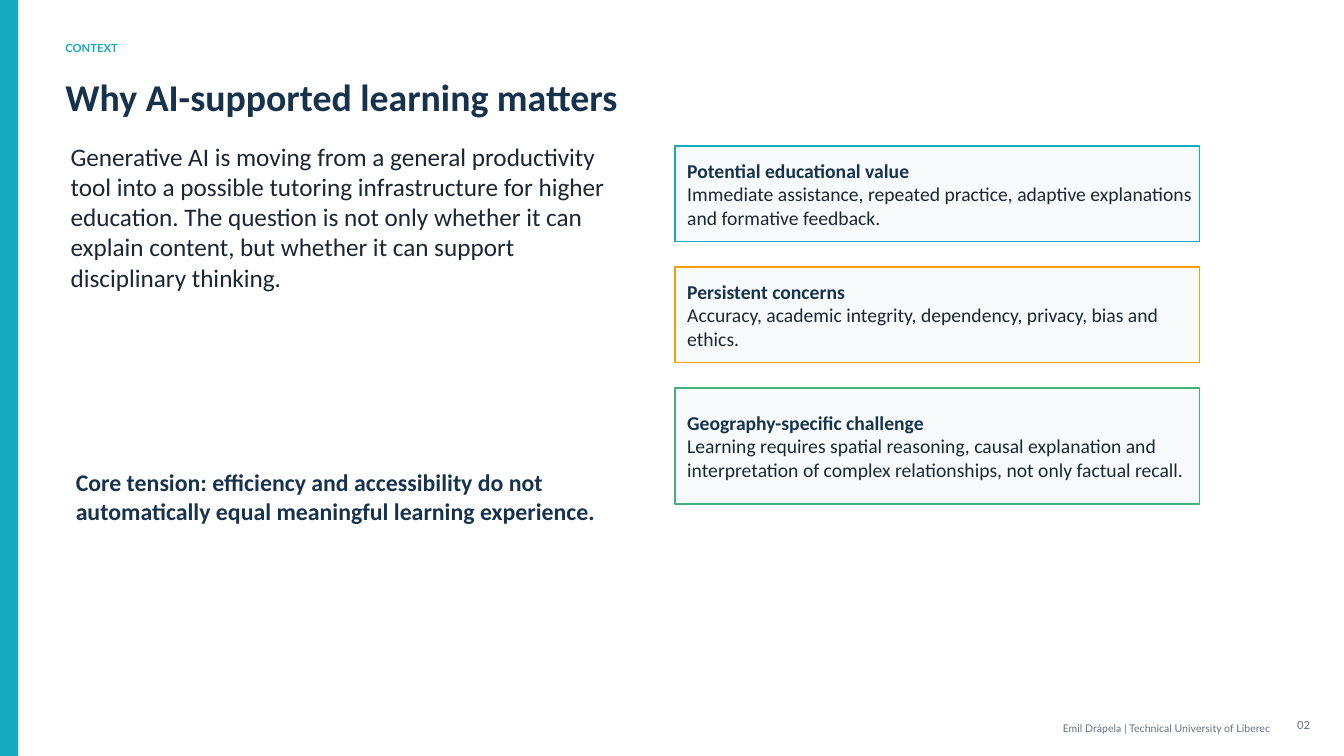
import pptx
import pptx.util
import pptx.dml.color
import pptx.enum.shapes
import pptx.enum.text

Cm = pptx.util.Cm
Color = pptx.dml.color.RGBColor
Align = pptx.enum.text.PP_ALIGN

TEAL = Color(0x15, 0xAA, 0xBF)
AMBER = Color(0xF5, 0x9F, 0x00)
GREEN = Color(0x45, 0xB0, 0x7A)
NAVY = Color(0x17, 0x32, 0x4D)
INK = Color(0x1C, 0x26, 0x33)
GREY = Color(0x66, 0x70, 0x85)
PALE = Color(0xF7, 0xFB, 0xFC)

CARDS = [
    ("Potential educational value",
     "Immediate assistance, repeated practice, adaptive explanations and formative feedback.",
     TEAL, 2.41),
    ("Persistent concerns",
     "Accuracy, academic integrity, dependency, privacy, bias and ethics.",
     AMBER, 2.41),
    ("Geography-specific challenge",
     "Learning requires spatial reasoning, causal explanation and interpretation of "
     "complex relationships, not only factual recall.",
     GREEN, 2.92),
]
CARD_TOP = 3.68
CARD_GAP = 0.64


def write(para, text, size, color, bold=False, face="Calibri", align=Align.LEFT):
    para.alignment = align
    run = para.add_run()
    run.text = text
    run.font.name = face
    run.font.size = pptx.util.Pt(size)
    run.font.bold = bold
    run.font.color.rgb = color


def set_frame(shape, inset=0):
    frame = shape.text_frame
    frame.word_wrap = True
    frame.auto_size = pptx.enum.text.MSO_AUTO_SIZE.NONE
    frame.vertical_anchor = pptx.enum.text.MSO_ANCHOR.MIDDLE
    frame.margin_left = Cm(inset)
    frame.margin_right = frame.margin_top = frame.margin_bottom = 0
    return frame


def add_title(slide, text, left, top, width, height):
    title = slide.shapes.title
    title.left, title.top = Cm(left), Cm(top)
    title.width, title.height = Cm(width), Cm(height)
    write(set_frame(title).paragraphs[0], text, 27, NAVY, bold=True)


def add_text(slide, text, left, top, width, height, **style):
    box = slide.shapes.add_textbox(Cm(left), Cm(top), Cm(width), Cm(height))
    write(set_frame(box).paragraphs[0], text, **style)


def add_rect(slide, left, top, width, height, fill, edge=None):
    rect = slide.shapes.add_shape(
        pptx.enum.shapes.MSO_SHAPE.RECTANGLE, Cm(left), Cm(top), Cm(width), Cm(height))
    rect.shadow.inherit = False
    rect.fill.solid()
    rect.fill.fore_color.rgb = fill
    if edge is None:
        rect.line.fill.background()
    else:
        rect.line.color.rgb = edge
        rect.line.width = pptx.util.Pt(1.2)
    return rect


def add_card(slide, top, head, body, edge, height):
    card = add_rect(slide, 17.02, top, 13.21, height, PALE, edge)
    frame = set_frame(card, inset=0.3)
    write(frame.paragraphs[0], head, 14, NAVY, bold=True)
    write(frame.add_paragraph(), body, 14, INK)


def main():
    deck = pptx.Presentation()
    deck.slide_width, deck.slide_height = Cm(33.87), Cm(19.05)
    slide = deck.slides.add_slide(deck.slide_layouts[5])

    add_rect(slide, 0, 0, 0.46, 19.05, TEAL)
    add_text(slide, "CONTEXT", 1.65, 0.89, 7.11, 0.64,
             size=8, color=TEAL, bold=True, face="Lato")
    add_title(slide, "Why AI-supported learning matters", 1.65, 1.73, 22.1, 1.4)
    add_text(slide,
             "Generative AI is moving from a general productivity tool into a possible "
             "tutoring infrastructure for higher education. The question is not only "
             "whether it can explain content, but whether it can support disciplinary "
             "thinking.",
             1.78, 3.68, 13.97, 3.56, size=18, color=INK)

    top = CARD_TOP
    for head, body, edge, height in CARDS:
        add_card(slide, top, head, body, edge, height)
        top += height + CARD_GAP

    add_text(slide,
             "Core tension: efficiency and accessibility do not automatically equal "
             "meaningful learning experience.",
             1.91, 11.56, 14.22, 1.91, size=17, color=NAVY, bold=True)
    add_text(slide, "Emil Drápela | Technical University of Liberec",
             22.23, 18.08, 9.78, 0.56,
             size=7.5, color=GREY, face="Lato", align=Align.RIGHT)
    add_text(slide, "02", 32.13, 17.98, 0.89, 0.56,
             size=8, color=GREY, face="Lato", align=Align.RIGHT)

    deck.save("out.pptx")


if __name__ == "__main__":
    main()
